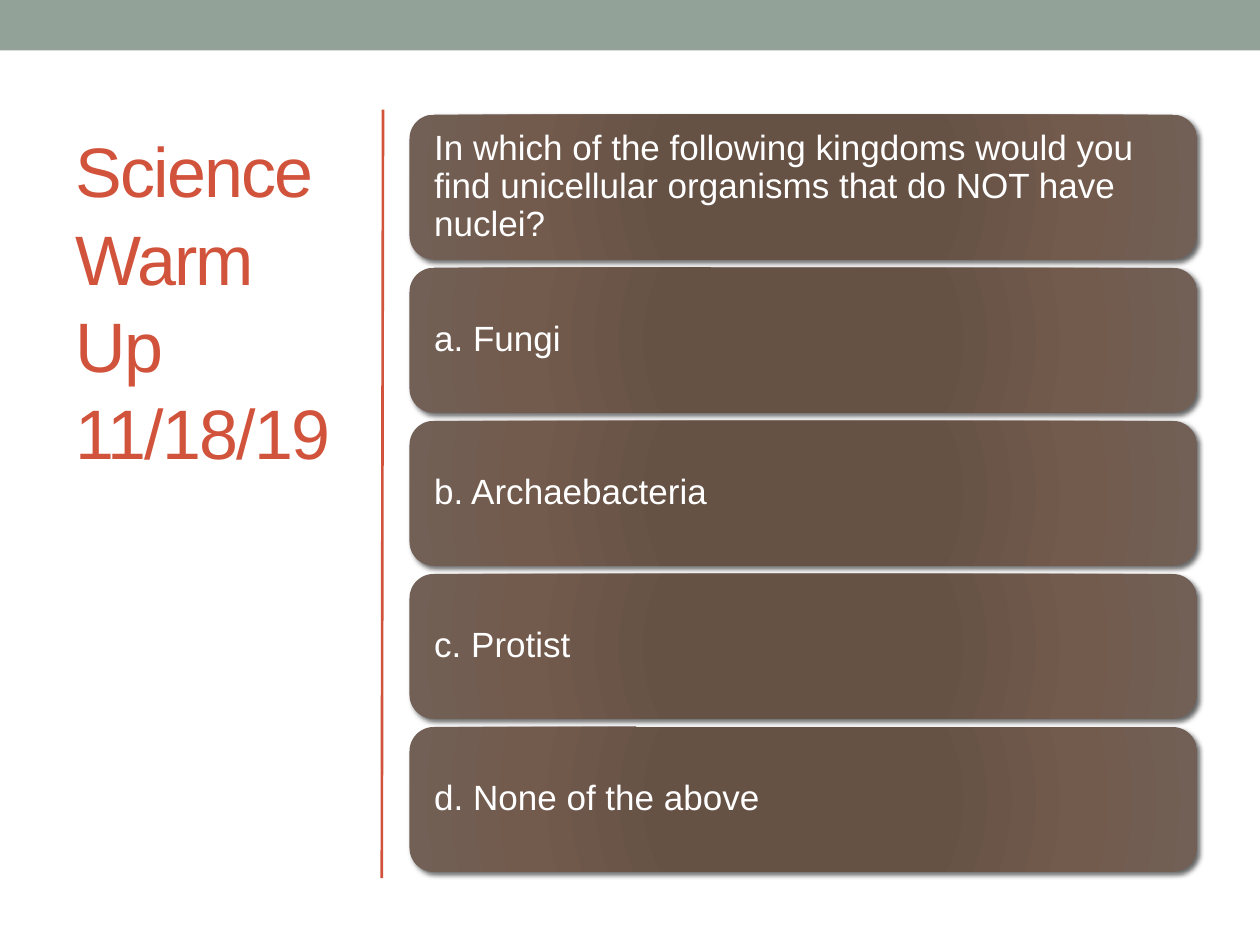
from lxml import etree
from pptx import Presentation, util as u
from pptx.dml.color import RGBColor
from pptx.enum import shapes, text
from pptx.oxml import parse_xml
from pptx.oxml.ns import nsdecls, qn

CARD_STOPS = [(0, "685044"), (34, "665145"), (70, "725A4D"), (100, "726056")]


def color(value):
    return RGBColor.from_string(value)


class SlideBuilder:
    font = "Arial"
    accent = "D2533C"
    band_fill = "93A299"
    card_text = "FFFFFF"

    def __init__(self, slide):
        self.slide = slide

    def style(self, paragraph, size, value):
        paragraph.font.name = self.font
        paragraph.font.size = u.Pt(size)
        paragraph.font.color.rgb = color(value)

    def shape(self, kind, left, top, width, height):
        shape = self.slide.shapes.add_shape(
            kind, *map(u.Inches, (left, top, width, height)))
        shape.shadow.inherit = False
        shape.line.fill.background()
        return shape

    def band(self, *box):
        shape = self.shape(shapes.MSO_SHAPE.RECTANGLE, *box)
        shape.fill.solid()
        shape.fill.fore_color.rgb = color(self.band_fill)

    def rule(self, *ends):
        line = self.slide.shapes.add_connector(
            shapes.MSO_CONNECTOR.STRAIGHT, *map(u.Inches, ends))
        line.line.color.rgb = color(self.accent)
        line.line.width = u.Pt(1.5)
        etree.SubElement(line._element.spPr, qn("a:effectLst"))

    def title(self, wording, *box):
        shape = self.slide.shapes.add_textbox(*map(u.Inches, box))
        frame = shape.text_frame
        frame.word_wrap = True
        frame.vertical_anchor = text.MSO_ANCHOR.BOTTOM
        paragraph = frame.paragraphs[0]
        paragraph.text = wording
        paragraph.line_spacing = 1.04
        self.style(paragraph, 40, self.accent)
        for run in paragraph.runs:
            run._r.get_or_add_rPr().set("spc", "-100")

    def card(self, wording, *box):
        shape = self.shape(shapes.MSO_SHAPE.ROUNDED_RECTANGLE, *box)
        self.radial_fill(shape)
        self.drop_shadow(shape)
        frame = shape.text_frame
        frame.word_wrap = True
        frame.vertical_anchor = text.MSO_ANCHOR.MIDDLE
        frame.margin_left = frame.margin_right = u.Inches(0.14)
        paragraph = frame.paragraphs[0]
        paragraph.text = wording
        paragraph.alignment = text.PP_ALIGN.LEFT
        paragraph.line_spacing = 0.9
        self.style(paragraph, 20, self.card_text)

    def radial_fill(self, shape):
        stops = "".join(
            f'<a:gs pos="{position * 1000}"><a:srgbClr val="{value}"/></a:gs>'
            for position, value in CARD_STOPS)
        gradient = parse_xml(
            f'<a:gradFill {nsdecls("a")} rotWithShape="1"><a:gsLst>{stops}</a:gsLst>'
            '<a:path path="circle"><a:fillToRect l="100000" t="100000" '
            'r="100000" b="100000"/></a:path></a:gradFill>')
        shape._element.spPr.find(qn("a:prstGeom")).addnext(gradient)

    def drop_shadow(self, shape):
        effects = shape._element.spPr.find(qn("a:effectLst"))
        effects.append(parse_xml(
            f'<a:outerShdw {nsdecls("a")} blurRad="{u.Pt(3)}" dist="{u.Pt(2)}" '
            'dir="2700000" rotWithShape="0"><a:srgbClr val="000000">'
            '<a:alpha val="60000"/></a:srgbClr></a:outerShdw>'))


def main():
    presentation = Presentation()
    presentation.slide_width = u.Inches(10)
    presentation.slide_height = u.Inches(7.5)
    builder = SlideBuilder(
        presentation.slides.add_slide(presentation.slide_layouts[6]))

    # Top band and divider
    builder.band(0, 0, 10, 0.4)
    builder.rule(3.04, 0.87, 3.03, 6.97)

    # Title
    builder.title("Science Warm Up\v11/18/19", 0.5, 0.84, 2.34, 2.97)

    # Question and answers
    cards = [
        "In which of the following kingdoms would you find unicellular "
        "organisms that do NOT have nuclei?",
        "a. Fungi",
        "b. Archaebacteria",
        "c. Protist",
        "d. None of the above",
    ]
    top, pitch = 0.91, 1.215
    for index, wording in enumerate(cards):
        builder.card(wording, 3.25, top + index * pitch, 6.25, 1.15)

    presentation.save("out.pptx")


if __name__ == "__main__":
    main()
